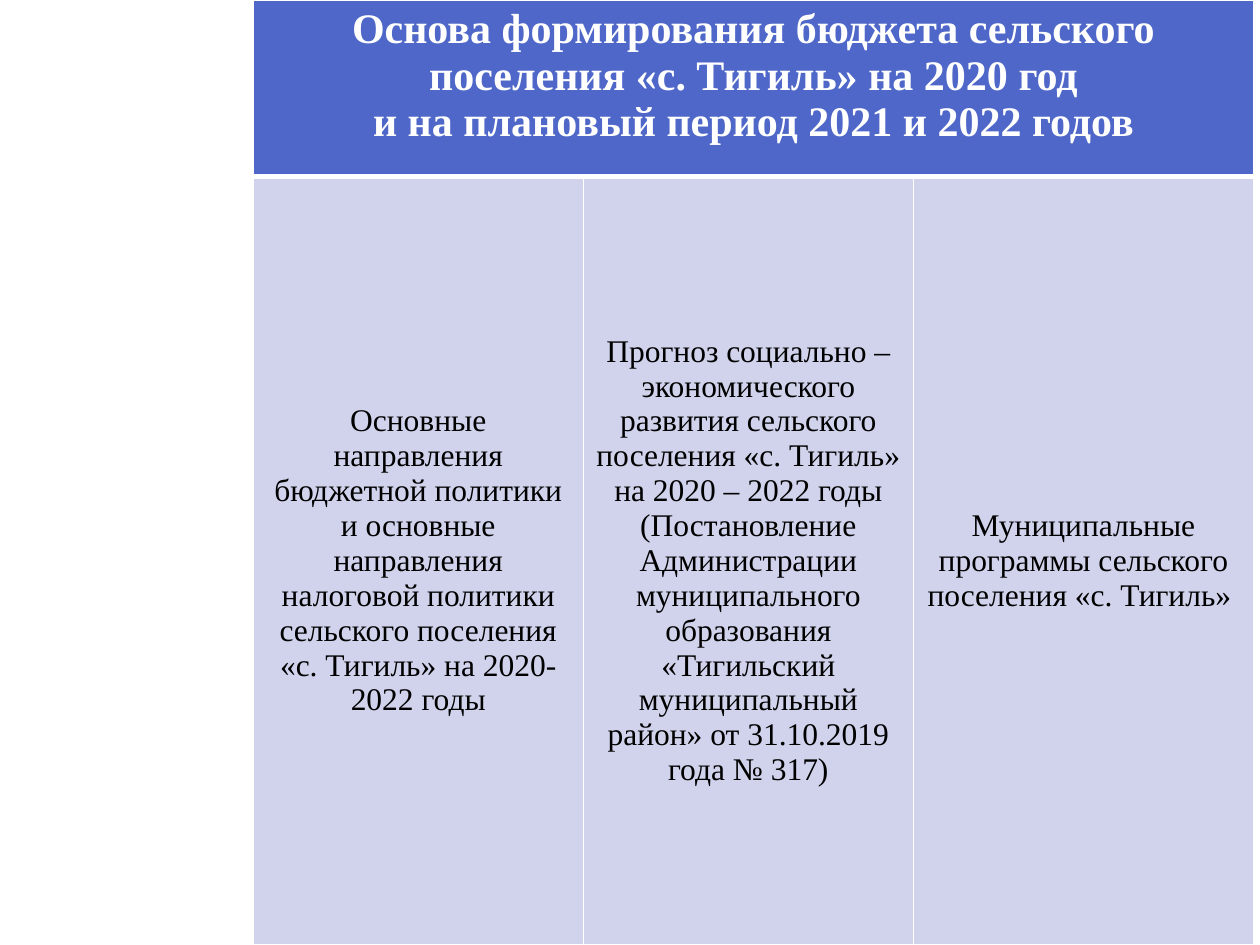
from lxml import etree
from pptx import Presentation
from pptx.dml.color import RGBColor
from pptx.enum import text
from pptx.oxml import ns
from pptx.util import Inches, Pt

FONT = "Times New Roman"
WHITE, BLACK, BLUE, LAVENDER = "FFFFFF", "000000", "4E67C8", "D0D3EB"
COLUMN_WIDTHS = [2.62, 2.62, 2.7]
ROW_HEIGHTS = [1.4, 6.1]
TITLE = [
    "Основа формирования бюджета сельского поселения «с. Тигиль» на 2020 год",
    "и на плановый период 2021 и 2022 годов",
]
FOUNDATIONS = [
    "Основные направления бюджетной политики и основные направления "
    "налоговой политики сельского поселения «с. Тигиль» на 2020-2022 годы",
    "Прогноз социально – экономического развития сельского поселения "
    "«с. Тигиль» на 2020 – 2022 годы (Постановление Администрации "
    "муниципального образования «Тигильский муниципальный район» "
    "от 31.10.2019 года № 317)",
    "Муниципальные программы сельского поселения «с. Тигиль» ",
]


def color(value):
    return RGBColor.from_string(value)


def set_borders(cell, **widths):
    """Draw white cell borders; widths are points by side L, R, T, B."""
    properties = cell._tc.get_or_add_tcPr()
    for index, side in enumerate("LRTB"):
        line = etree.Element(ns.qn(f"a:ln{side}"), w=str(Pt(widths.get(side, 1))))
        fill = etree.SubElement(line, ns.qn("a:solidFill"))
        etree.SubElement(fill, ns.qn("a:srgbClr"), val=WHITE)
        properties.insert(index, line)


def fill_cell(cell, lines, fill, anchor, font_color, **font_format):
    cell.fill.solid()
    cell.fill.fore_color.rgb = color(fill)
    cell.vertical_anchor = anchor
    cell.text_frame.text = "\n".join(lines)
    for para in cell.text_frame.paragraphs:
        para.alignment = text.PP_ALIGN.CENTER
        for span in para.runs:
            span.font.name = FONT
            span.font.color.rgb = color(font_color)
            for name, value in font_format.items():
                setattr(span.font, name, value)


def add_budget_table(page):
    table = page.shapes.add_table(
        len(ROW_HEIGHTS), len(COLUMN_WIDTHS), Inches(2.01), Inches(0),
        Inches(sum(COLUMN_WIDTHS)), Inches(sum(ROW_HEIGHTS))).table
    for column, width in zip(table.columns, COLUMN_WIDTHS):
        column.width = Inches(width)
    for row, height in zip(table.rows, ROW_HEIGHTS):
        row.height = Inches(height)

    # Title across all columns, with a thick rule below
    title = table.cell(0, 0)
    title.merge(table.cell(0, len(COLUMN_WIDTHS) - 1))
    fill_cell(title, TITLE, BLUE, text.MSO_ANCHOR.TOP, WHITE,
              size=Pt(24), bold=True)
    for cell in table.rows[0].cells:
        set_borders(cell, B=3)

    # Foundations of the budget
    for cell, foundation in zip(table.rows[1].cells, FOUNDATIONS):
        fill_cell(cell, [foundation], LAVENDER, text.MSO_ANCHOR.MIDDLE, BLACK,
                  size=Pt(18), bold=False)
        set_borders(cell, T=3)


def main():
    deck = Presentation()
    deck.slide_width, deck.slide_height = Inches(10), Inches(7.5)
    page = deck.slides.add_slide(deck.slide_layouts[6])
    add_budget_table(page)
    deck.save("out.pptx")


if __name__ == "__main__":
    main()
